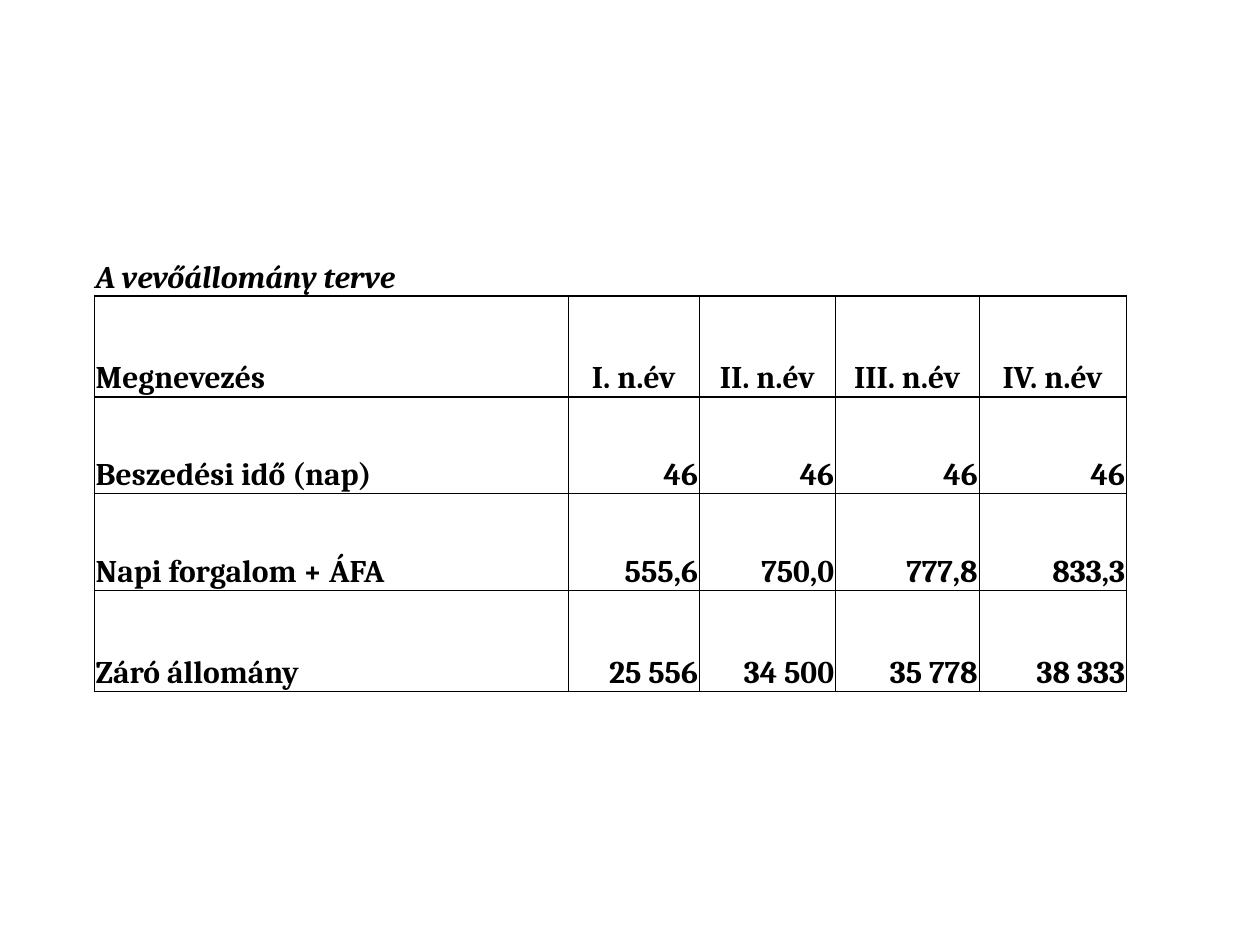
from dataclasses import dataclass

from lxml.etree import SubElement
from pptx import Presentation
from pptx.dml.color import RGBColor
from pptx.enum.text import MSO_ANCHOR, PP_ALIGN
from pptx.oxml.ns import qn
from pptx.table import _Cell
from pptx.util import Inches, Pt


@dataclass(frozen=True)
class Theme:
    font: str = "Cambria"
    size: float = 18
    ink: str = "000000"
    thick: float = 1
    thin: float = 0.5


@dataclass(frozen=True)
class PlanRow:
    label: str
    quarters: tuple[str, ...]
    height: float


THEME = Theme()
COLUMN_WIDTHS = (3.76, 1.04, 1.08, 1.14, 1.17)
TITLE_ROW, HEADER_ROW = 0, 1
PLAN = (
    PlanRow("A vevőállomány terve", ("",) * 4, 0.8),
    PlanRow("Megnevezés", ("I. n.év", "II. n.év", "III. n.év", "IV. n.év"), 0.8),
    PlanRow("Beszedési idő (nap)", ("46",) * 4, 0.77),
    PlanRow("Napi forgalom + ÁFA", ("555,6", "750,0", "777,8", "833,3"), 0.77),
    PlanRow("Záró állomány", ("25 556", "34 500", "35 778", "38 333"), 0.8),
)
LAST_ROW, LAST_COLUMN = len(PLAN) - 1, len(COLUMN_WIDTHS) - 1


def border_widths(row: int, column: int) -> dict[str, float]:
    """Width of each side; zero means no line."""
    if row == TITLE_ROW:
        return {"lnL": 0, "lnR": 0, "lnT": 0, "lnB": THEME.thick}
    header_end = row == HEADER_ROW and column == LAST_COLUMN
    heavy = {
        "lnL": column == 0,
        "lnR": header_end,
        "lnT": row <= HEADER_ROW + 1,
        "lnB": row in (HEADER_ROW, LAST_ROW),
    }
    return {side: THEME.thick if is_heavy else THEME.thin for side, is_heavy in heavy.items()}


def draw_borders(cell: _Cell, widths: dict[str, float]) -> None:
    properties = cell._tc.get_or_add_tcPr()
    for side, width in widths.items():
        line = SubElement(properties, qn(f"a:{side}"), w=str(Pt(width)))
        if width:
            fill = SubElement(line, qn("a:solidFill"))
            SubElement(fill, qn("a:srgbClr"), val=THEME.ink)
        else:
            SubElement(line, qn("a:noFill"))


def fill_cell(cell: _Cell, text: str, row: int, column: int) -> None:
    draw_borders(cell, border_widths(row, column))
    cell.fill.background()
    cell.vertical_anchor = MSO_ANCHOR.BOTTOM
    cell.margin_left = cell.margin_right = cell.margin_top = Inches(0.01)
    cell.margin_bottom = Inches(0)
    if not text:
        return
    paragraph = cell.text_frame.paragraphs[0]
    if column == 0:
        paragraph.alignment = PP_ALIGN.LEFT
    else:
        paragraph.alignment = PP_ALIGN.CENTER if row == HEADER_ROW else PP_ALIGN.RIGHT
    run = paragraph.add_run()
    run.text = text
    run.font.name = THEME.font
    run.font.size = Pt(THEME.size)
    run.font.bold = True
    run.font.italic = row == TITLE_ROW
    run.font.color.rgb = RGBColor.from_string(THEME.ink)


def main() -> None:
    presentation = Presentation()
    presentation.slide_width, presentation.slide_height = Inches(10), Inches(7.5)
    slide = presentation.slides.add_slide(presentation.slide_layouts[6])

    # Receivables plan, without banding or header style
    receivables = slide.shapes.add_table(
        len(PLAN), len(COLUMN_WIDTHS), Inches(0.75), Inches(1.55),
        Inches(sum(COLUMN_WIDTHS)), Inches(sum(entry.height for entry in PLAN)),
    ).table
    receivables.first_row = receivables.horz_banding = False

    for column, width in enumerate(COLUMN_WIDTHS):
        receivables.columns[column].width = Inches(width)

    # Title, header and figures
    for row, entry in enumerate(PLAN):
        receivables.rows[row].height = Inches(entry.height)
        for column, text in enumerate((entry.label, *entry.quarters)):
            fill_cell(receivables.cell(row, column), text, row, column)

    presentation.save("out.pptx")


if __name__ == "__main__":
    main()
